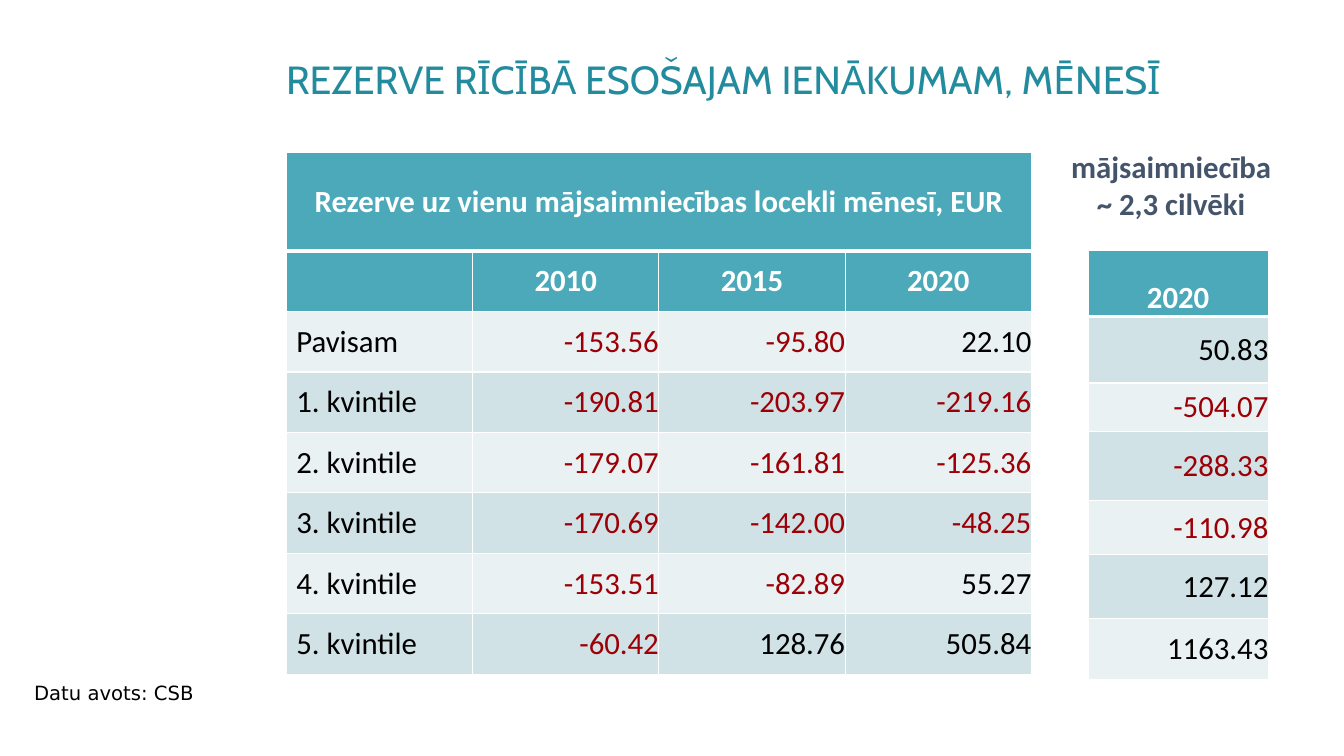
from dataclasses import dataclass

from lxml.etree import SubElement
from pptx import Presentation
from pptx.dml.color import RGBColor
from pptx.enum.text import MSO_ANCHOR as Anchor, PP_ALIGN as Align
from pptx.oxml.ns import qn
from pptx.util import Inches, Pt

COLORS = {
    "title": "228B9D",
    "header": "4CA9B9",
    "light": "E9F1F3",
    "dark": "D0E2E6",
    "white": "FFFFFF",
    "black": "000000",
    "negative": "9C0006",
    "household": "44546A",
}


@dataclass
class Label:
    text: str
    box: tuple[float, float, float, float]
    font: dict
    color: str
    align: Align = Align.LEFT
    line_spacing: float = 1.0


@dataclass
class Grid:
    box: tuple[float, float, float, float]
    row_heights: list[float]
    rows: list[list[str]]
    header_rows: int
    bands: tuple[str, str]
    top_anchor: Anchor = Anchor.MIDDLE


LABELS = [
    Label("REZERVE RĪCĪBĀ ESOŠAJAM IENĀKUMAM, MĒNESĪ", (2.74, 0.55, 10.23, 0.68),
          {"name": "Cabin", "size": Pt(28)}, "title", line_spacing=0.9),
    Label("Datu avots: CSB", (0.24, 6.71, 4.2, 0.34),
          {"name": "DejaVu Sans", "size": Pt(14)}, "black"),
    Label("mājsaimniecība ~ 2,3 cilvēki", (10.49, 1.42, 2.25, 0.84),
          {"name": "Calibri", "size": Pt(22), "bold": True}, "household", Align.CENTER),
]

PER_MEMBER = Grid(
    (2.84, 1.51, 7.39, 5.19),
    [0.98] + [0.6] * 7,
    [
        ["Rezerve uz vienu mājsaimniecības locekli mēnesī, EUR", "", "", ""],
        ["", "2010", "2015", "2020"],
        ["Pavisam", "-153.56", "-95.80", "22.10"],
        ["1. kvintile", "-190.81", "-203.97", "-219.16"],
        ["2. kvintile", "-179.07", "-161.81", "-125.36"],
        ["3. kvintile", "-170.69", "-142.00", "-48.25"],
        ["4. kvintile", "-153.51", "-82.89", "55.27"],
        ["5. kvintile", "-60.42", "128.76", "505.84"],
    ],
    header_rows=2,
    bands=("light", "dark"),
)
PER_HOUSEHOLD = Grid(
    (10.79, 2.48, 1.79, 4.26),
    [0.66, 0.66, 0.48, 0.69, 0.53, 0.64, 0.6],
    [["2020"], ["50.83"], ["-504.07"], ["-288.33"], ["-110.98"], ["127.12"], ["1163.43"]],
    header_rows=1,
    bands=("dark", "light"),
    top_anchor=Anchor.BOTTOM,
)


def rgb(name: str) -> RGBColor:
    return RGBColor.from_string(COLORS[name])


def style_font(font, values: dict, color: str) -> None:
    for key, value in values.items():
        setattr(font, key, value)
    font.color.rgb = rgb(color)


def draw_label(slide, label: Label) -> None:
    frame = slide.shapes.add_textbox(*map(Inches, label.box)).text_frame
    frame.word_wrap = True
    paragraph = frame.paragraphs[0]
    paragraph.alignment = label.align
    paragraph.line_spacing = label.line_spacing
    run = paragraph.add_run()
    run.text = label.text
    style_font(run.font, label.font, label.color)


def add_borders(cell, row: int) -> None:
    """White rules, thicker below the first row."""
    widths = {"lnL": 1, "lnR": 1, "lnT": 3 if row == 1 else 1, "lnB": 3 if row == 0 else 1}
    properties = cell._tc.get_or_add_tcPr()
    for side, width in widths.items():
        line = SubElement(properties, qn(f"a:{side}"), w=str(Pt(width)))
        fill = SubElement(line, qn("a:solidFill"))
        SubElement(fill, qn("a:srgbClr"), val=COLORS["white"])


def fill_cell(cell, text: str, row: int, column: int, grid: Grid) -> None:
    is_header = row < grid.header_rows
    is_name = column == 0 and len(grid.rows[0]) > 1
    band = grid.bands[(row - grid.header_rows) % 2]
    add_borders(cell, row)
    cell.fill.solid()
    cell.fill.fore_color.rgb = rgb("header" if is_header else band)

    indent = Inches(0.1) if is_name and not is_header else 0
    layout = {"margin_left": indent, "margin_right": 0, "margin_top": 0, "margin_bottom": 0,
              "vertical_anchor": grid.top_anchor if row == 0 else Anchor.MIDDLE}
    for key, value in layout.items():
        setattr(cell, key, value)
    if not text:
        return

    paragraph = cell.text_frame.paragraphs[0]
    if is_header:
        paragraph.alignment, color = Align.CENTER, "white"
    else:
        paragraph.alignment = Align.LEFT if is_name else Align.RIGHT
        color = "negative" if text.startswith("-") else "black"
    run = paragraph.add_run()
    run.text = text
    style_font(run.font, {"name": "Calibri", "size": Pt(22), "bold": is_header}, color)


def draw_grid(slide, grid: Grid) -> None:
    columns = len(grid.rows[0])
    table = slide.shapes.add_table(len(grid.rows), columns, *map(Inches, grid.box)).table
    for column in table.columns:
        column.width = Inches(grid.box[2] / columns)
    for row, height in zip(table.rows, grid.row_heights):
        row.height = Inches(height)
    for r, values in enumerate(grid.rows):
        for c, text in enumerate(values):
            fill_cell(table.cell(r, c), text, r, c, grid)
    if columns > 1:
        table.cell(0, 0).merge(table.cell(0, columns - 1))


def main() -> None:
    deck = Presentation()
    deck.slide_width, deck.slide_height = Inches(13.33), Inches(7.5)
    slide = deck.slides.add_slide(deck.slide_layouts[6])
    # Reserve tables
    for grid in (PER_MEMBER, PER_HOUSEHOLD):
        draw_grid(slide, grid)
    # Title, data source and household size
    for label in LABELS:
        draw_label(slide, label)
    deck.save("out.pptx")


if __name__ == "__main__":
    main()
